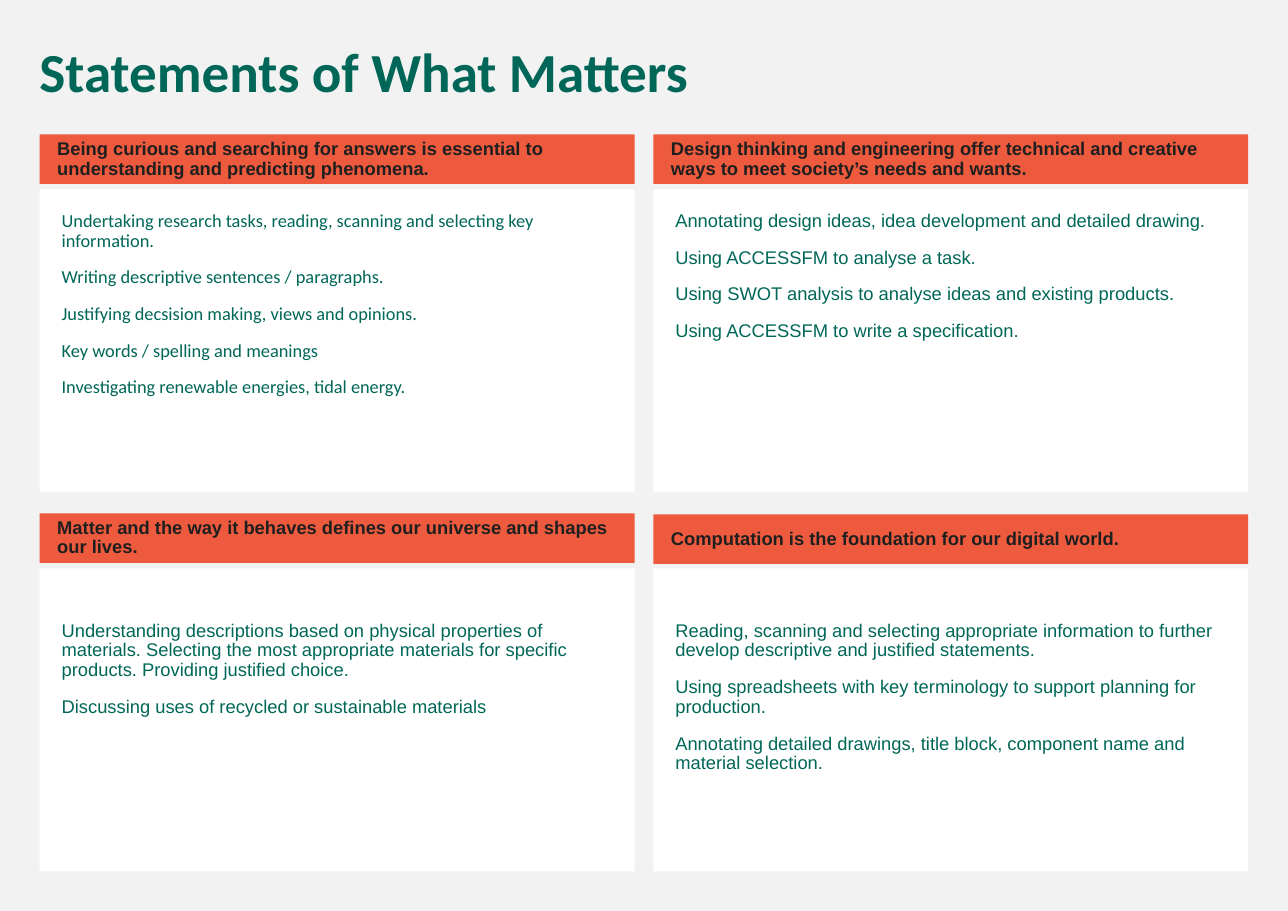
import pptx
import pptx.util
import pptx.dml.color
import pptx.enum.shapes
import pptx.enum.text
from dataclasses import dataclass

Inches = pptx.util.Inches
Pt = pptx.util.Pt
Anchor = pptx.enum.text.MSO_ANCHOR


@dataclass(frozen=True)
class Theme:
    page: str = "F2F2F2"
    panel: str = "FFFFFF"
    banner: str = "ED5A3E"
    green: str = "006758"
    dark: str = "1F1F1F"
    heading_font: str = "Calibri"
    text_font: str = "Arial"
    title_size: int = 36
    text_size: int = 12
    line_spacing: float = 0.9
    space_before: int = 11


@dataclass(frozen=True)
class Statement:
    heading: str
    lines: tuple
    font: str
    banner_top: float = 0
    text_top: float = 0.2


THEME = Theme()
PAGE_WIDTH, PAGE_HEIGHT = 11.69, 8.27
GRID_LEFT, GRID_TOP = 0.36, 1.22
COLUMN_STEP, ROW_STEP = 5.57, 3.44
CARD_WIDTH, BANNER_HEIGHT = 5.4, 0.45
PANEL_OFFSET, PANEL_HEIGHT = 0.5, 2.75

TITLE = "Statements of What Matters"
STATEMENTS = (
    Statement(
        "Being curious and searching for answers is essential to understanding and predicting phenomena.",
        (
            "Undertaking research tasks, reading, scanning and selecting key information.",
            "Writing descriptive sentences / paragraphs.",
            "Justifying decsision making, views and opinions.",
            "Key words / spelling and meanings",
            "Investigating renewable energies, tidal energy.",
        ),
        THEME.heading_font,
    ),
    Statement(
        "Design thinking and engineering offer technical and creative ways to meet society’s needs and wants.",
        (
            "Annotating design ideas, idea development and detailed drawing.",
            "Using ACCESSFM to analyse a task.",
            "Using SWOT analysis to analyse ideas and existing products.",
            "Using ACCESSFM to write a specification.",
        ),
        THEME.text_font,
    ),
    Statement(
        "Matter and the way it behaves defines our universe and shapes our lives.",
        (
            "Understanding descriptions based on physical properties of materials. "
            "Selecting the most appropriate materials for specific products. "
            "Providing justified choice.",
            "Discussing uses of recycled or sustainable materials",
        ),
        THEME.text_font,
        text_top=0.48,
    ),
    Statement(
        "Computation is the foundation for our digital world.",
        (
            "Reading, scanning and selecting appropriate information to further "
            "develop descriptive and justified statements.",
            "Using spreadsheets with key terminology to support planning for production.",
            "Annotating detailed drawings, title block, component name and material selection.",
        ),
        THEME.text_font,
        banner_top=0.01,
        text_top=0.48,
    ),
)


def color(value):
    return pptx.dml.color.RGBColor.from_string(value)


def write(box, lines, font, size, ink, bold=False, anchor=Anchor.TOP, insets=(0.1, 0.05, 0.1, 0.05)):
    frame = box.text_frame
    frame.word_wrap = True
    frame.vertical_anchor = anchor
    frame.margin_left, frame.margin_top, frame.margin_right, frame.margin_bottom = map(Inches, insets)
    for index, line in enumerate(lines):
        para = frame.add_paragraph() if index else frame.paragraphs[0]
        para.alignment = pptx.enum.text.PP_ALIGN.LEFT
        para.line_spacing = THEME.line_spacing
        para.space_before = Pt(THEME.space_before)
        span = para.add_run()
        span.text = line
        span.font.name = font
        span.font.size = Pt(size)
        span.font.bold = bold
        span.font.color.rgb = color(ink)


def add_block(page, left, top, width, height, fill):
    box = page.shapes.add_shape(
        pptx.enum.shapes.MSO_SHAPE.RECTANGLE, *map(Inches, (left, top, width, height))
    )
    box.shadow.inherit = False
    box.fill.solid()
    box.fill.fore_color.rgb = color(fill)
    box.line.fill.background()
    return box


def add_title(page, left, top, width, height):
    box = page.shapes.add_textbox(*map(Inches, (left, top, width, height)))
    write(box, [TITLE], THEME.heading_font, THEME.title_size, THEME.green, bold=True)


def add_card(page, left, top, width, statement):
    panel = add_block(page, left, top + PANEL_OFFSET, width, PANEL_HEIGHT, THEME.panel)
    write(panel, statement.lines, statement.font, THEME.text_size, THEME.green,
          insets=(0.2, statement.text_top, 0.2, 0.2))
    banner = add_block(page, left, top + statement.banner_top, width, BANNER_HEIGHT, THEME.banner)
    write(banner, [statement.heading], THEME.text_font, THEME.text_size, THEME.dark,
          bold=True, anchor=Anchor.MIDDLE, insets=(0.16, 0.05, 0.1, 0.05))


def main():
    deck = pptx.Presentation()
    deck.slide_width = Inches(PAGE_WIDTH)
    deck.slide_height = Inches(PAGE_HEIGHT)
    page = deck.slides.add_slide(deck.slide_layouts[6])
    page.background.fill.solid()
    page.background.fill.fore_color.rgb = color(THEME.page)
    add_title(page, GRID_LEFT - 0.1, 0.36, 11.08, 0.65)
    for index, statement in enumerate(STATEMENTS):
        row, column = divmod(index, 2)
        add_card(page, GRID_LEFT + column * COLUMN_STEP, GRID_TOP + row * ROW_STEP,
                 CARD_WIDTH, statement)
    deck.save("out.pptx")


if __name__ == "__main__":
    main()
